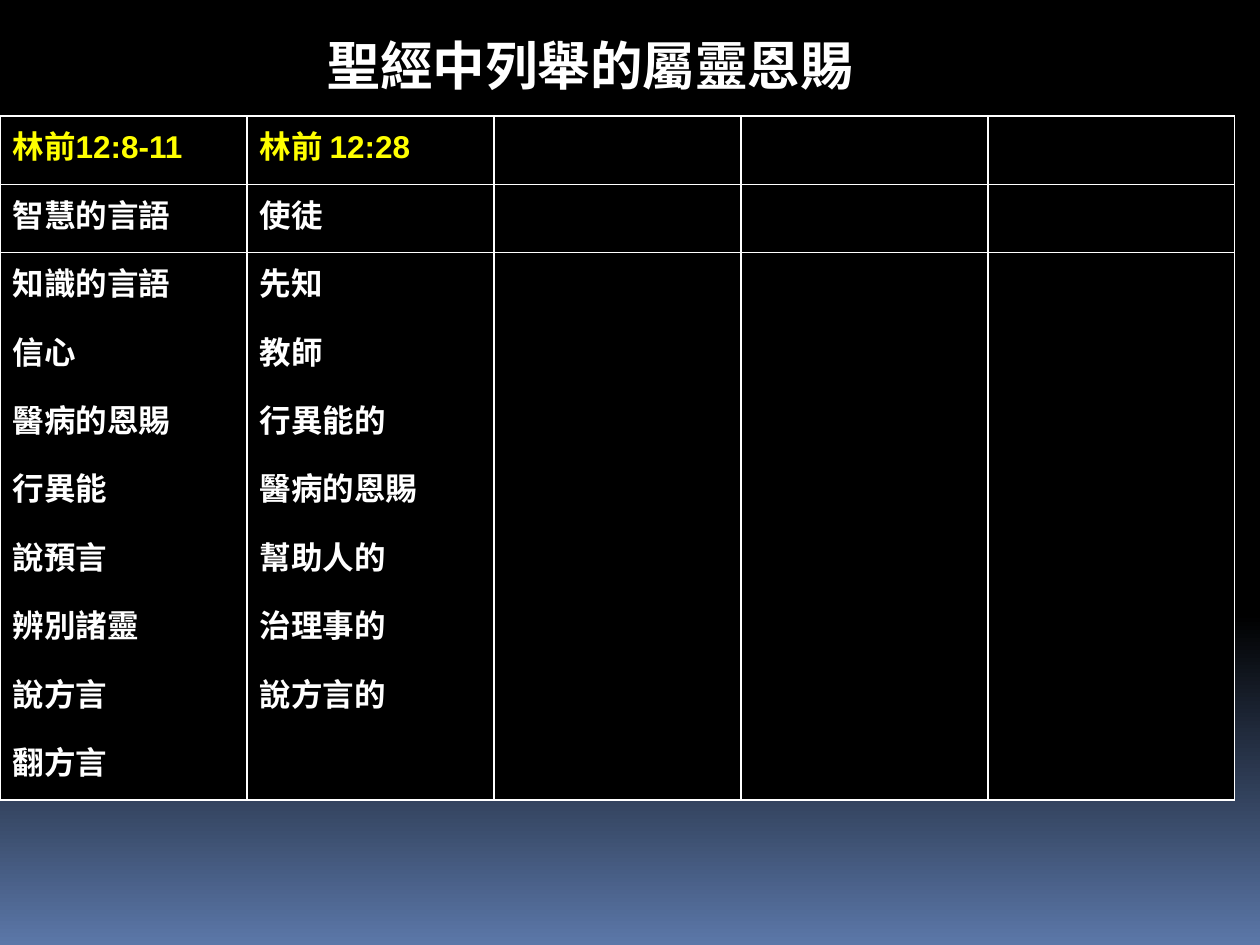
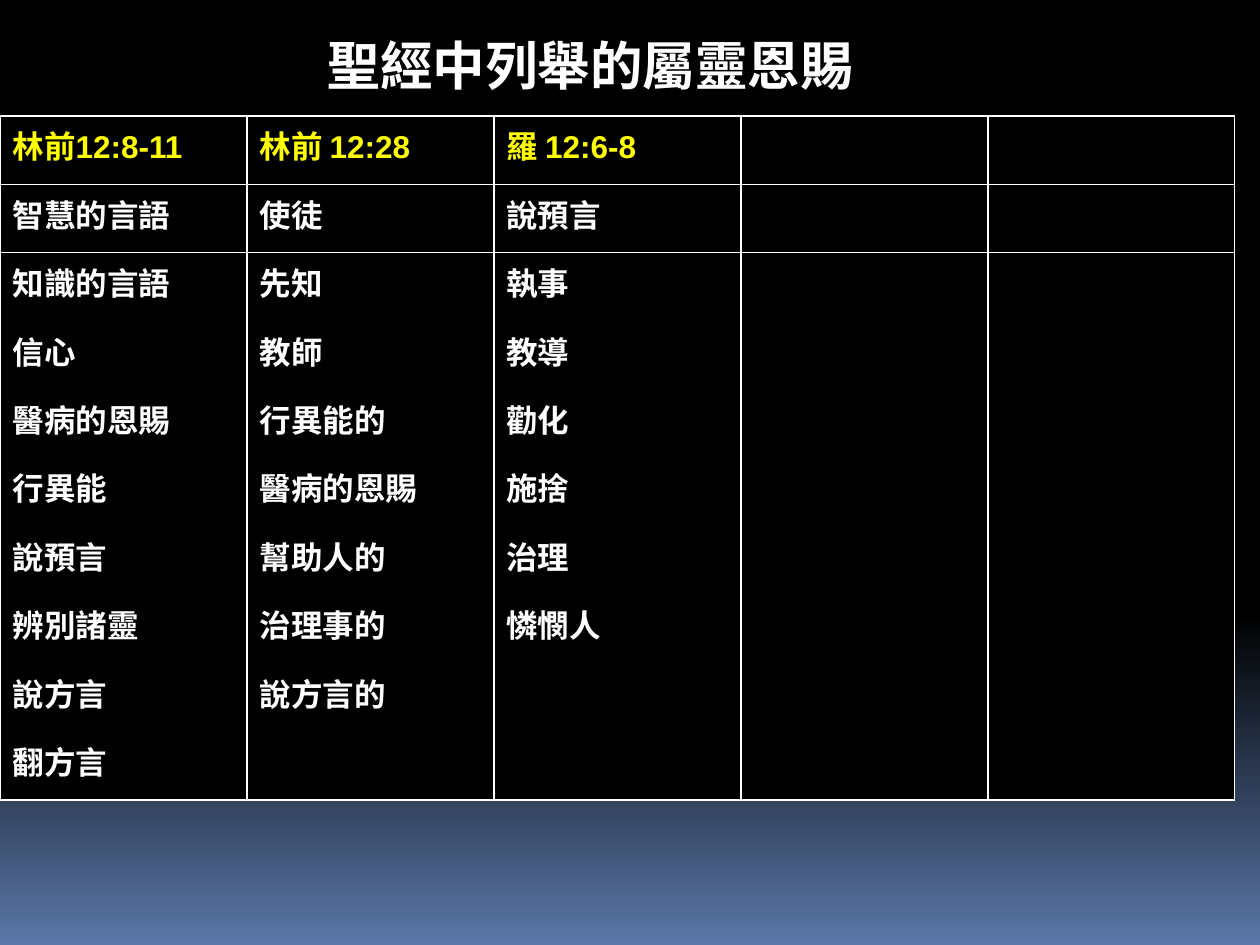
from dataclasses import dataclass

from lxml import etree
from pptx import Presentation, util as u
from pptx.dml.color import RGBColor
from pptx.enum import text
from pptx.oxml.ns import qn

TITLE = "聖經中列舉的屬靈恩賜"
FIRST_CORINTHIANS_LIST = ("林前12:8-11", [
    "智慧的言語", "知識的言語", "信心", "醫病的恩賜", "行異能",
    "說預言", "辨別諸靈", "說方言", "翻方言"])
CHURCH_OFFICES = ("林前 12:28", [
    "使徒", "先知", "教師", "行異能的", "醫病的恩賜",
    "幫助人的", "治理事的", "說方言的"])
ROMANS_LIST = ("羅 12:6-8", [
    "說預言", "執事", "教導", "勸化", "施捨", "治理", "憐憫人"])
SLIDES = [
    [FIRST_CORINTHIANS_LIST, CHURCH_OFFICES],
    [FIRST_CORINTHIANS_LIST, CHURCH_OFFICES, ROMANS_LIST],
]

WIDTH, HEIGHT = u.Inches(10), u.Inches(7.5)
COLUMNS, ROWS = 5, 10
TITLE_BOX = [u.Inches(n) for n in (2.48, 0.21, 4.41, 0.61)]
TABLE_BOX = [u.Inches(n) for n in (0, 0.92, 9.8, 5.43)]
PLAIN_TABLE_STYLE = "{2D5ABB26-0587-4C30-8999-92F81FD0307C}"


@dataclass(frozen=True)
class Theme:
    """Colours, type sizes and line width used on every slide."""
    font: str = "Arial"
    dark: str = "000000"
    glow: str = "5B77A8"
    light: str = "FFFFFF"
    heading: str = "FFFF00"
    title_size: int = 30
    table_size: int = 18
    line_width: int = 1


THEME = Theme()


def style_text(paragraph, size, colour):
    """Format every run of a paragraph as bold theme text."""
    for run in paragraph.runs:
        run.font.name = THEME.font
        run.font.size = u.Pt(size)
        run.font.bold = True
        run.font.color.rgb = RGBColor.from_string(colour)


def paint_background(master):
    """Give the master a black background that glows blue at the foot."""
    fill = master.background.fill
    fill.gradient()
    fill.gradient_angle = 270
    stops = zip(fill.gradient_stops, ((0.65, THEME.dark), (1, THEME.glow)))
    for stop, (position, colour) in stops:
        stop.position = position
        stop.color.rgb = RGBColor.from_string(colour)


def add_title(slide):
    """Place and format the title."""
    title = slide.shapes.title
    title.left, title.top, title.width, title.height = TITLE_BOX
    frame = title.text_frame
    frame.text = TITLE
    frame.word_wrap = False
    frame.auto_size = text.MSO_AUTO_SIZE.SHAPE_TO_FIT_TEXT
    frame.vertical_anchor = text.MSO_ANCHOR.TOP
    frame.paragraphs[0].alignment = text.PP_ALIGN.CENTER
    style_text(frame.paragraphs[0], THEME.title_size, THEME.light)


def add_borders(cell, sides):
    """Draw the cell's lines on the given sides, named L, R, T and B."""
    properties = cell._tc.get_or_add_tcPr()
    for side in sides:
        line = etree.SubElement(properties, qn(f"a:ln{side}"), w=str(u.Pt(THEME.line_width)))
        fill = etree.SubElement(line, qn("a:solidFill"))
        etree.SubElement(fill, qn("a:srgbClr"), val=THEME.light)


def border_sides(row):
    """Return the sides ruled in a row: columns always, header and foot across."""
    return "LR" + "T" * (row in (0, 1)) + "B" * (row in (0, ROWS - 1))


def add_gift_table(slide, gift_lists):
    """Add the table with one list of gifts to a column."""
    frame = slide.shapes.add_table(ROWS, COLUMNS, *TABLE_BOX)
    frame.element.xpath(".//a:tableStyleId")[0].text = PLAIN_TABLE_STYLE
    table = frame.table
    table.first_row = table.horz_banding = False
    entries = {(row, column): entry
               for column, (heading, gifts) in enumerate(gift_lists)
               for row, entry in enumerate([heading, *gifts])}
    for row in range(ROWS):
        colour = THEME.light if row else THEME.heading
        for column in range(COLUMNS):
            cell = table.cell(row, column)
            add_borders(cell, border_sides(row))
            cell.fill.solid()
            cell.fill.fore_color.rgb = RGBColor.from_string(THEME.dark)
            if (row, column) in entries:
                cell.text_frame.text = entries[row, column]
                style_text(cell.text_frame.paragraphs[0], THEME.table_size, colour)


def main():
    """Build and save the presentation."""
    presentation = Presentation()
    presentation.slide_width, presentation.slide_height = WIDTH, HEIGHT
    paint_background(presentation.slide_master)
    layout = presentation.slide_layouts.get_by_name("Title Only")
    for gift_lists in SLIDES:
        slide = presentation.slides.add_slide(layout)
        add_title(slide)
        add_gift_table(slide, gift_lists)
    presentation.save("out.pptx")


if __name__ == "__main__":
    main()
